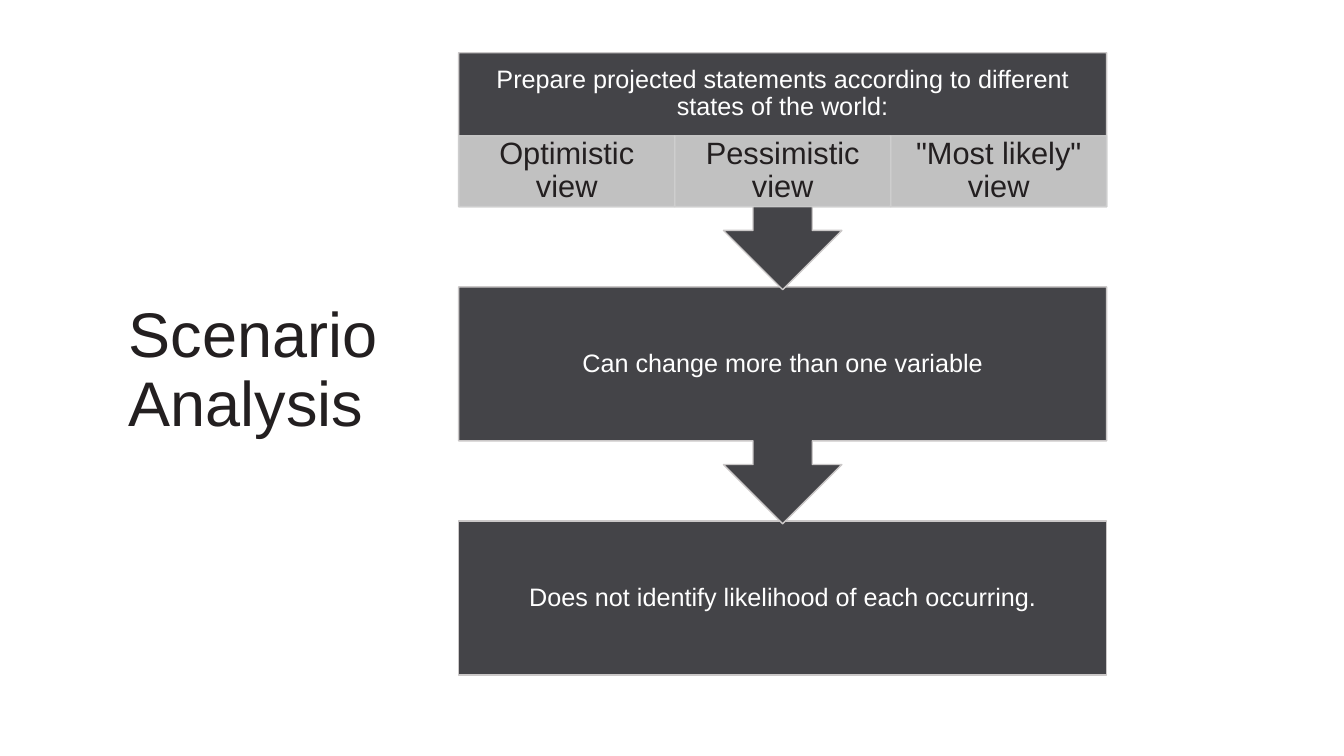
from lxml import etree
from pptx import Presentation
from pptx import util as u
from pptx.dml.color import RGBColor
from pptx.enum import shapes, text
from pptx.oxml.ns import qn

DARK, BORDER, VIEW_GREY = "444448", "CBC8C8", "CFCFCF"
INK, WHITE = "231F20", "FFFFFF"


def paint(color_format, hex_color, opacity=100):
    """Set a solid fill's or line's colour, with opacity in percent."""
    color_format.solid()
    color_format.fore_color.rgb = RGBColor.from_string(hex_color)
    if opacity < 100:
        color = color_format.fore_color
        element = color._color._xClr
        etree.SubElement(element, qn("a:alpha"), val=str(opacity * 1000))


def write(shape, words, size, hex_color, insets, align):
    """Fill a shape with one middle-anchored paragraph; insets are left, top, right, bottom in cm."""
    frame = shape.text_frame
    frame.word_wrap = True
    frame.vertical_anchor = text.MSO_ANCHOR.MIDDLE
    frame.margin_left, frame.margin_top, frame.margin_right, frame.margin_bottom = map(u.Cm, insets)
    paragraph = frame.paragraphs[0]
    paragraph.alignment = align
    paragraph.line_spacing = 0.9
    run = paragraph.add_run()
    run.text = words
    run.font.name = "Arial"
    run.font.size = u.Pt(size)
    paint(run.font.fill, hex_color)


presentation = Presentation()
presentation.slide_width = u.Cm(33.87)
presentation.slide_height = u.Cm(19.05)
slide = presentation.slides.add_slide(presentation.slide_layouts[6])

title = slide.shapes.add_textbox(u.Cm(3), u.Cm(1.63), u.Cm(7.04), u.Cm(15.47))
write(title, "Scenario Analysis", 45, INK, (0.25, 0.13, 0.25, 0.13), text.PP_ALIGN.LEFT)

# Three steps, drawn from the bottom up so each arrow tip lies over the next box
left, top, width, step_pitch = 11.56, 1.33, 16.33, 5.9
callout, box = shapes.MSO_SHAPE.DOWN_ARROW_CALLOUT, shapes.MSO_SHAPE.RECTANGLE
steps = [
    # words, shape, height, bottom inset (the first leaves room for the views)
    ("Prepare projected statements according to different states of the world:", callout, 5.97, 2.16),
    ("Can change more than one variable", callout, 5.97, 0.36),
    ("Does not identify likelihood of each occurring.", box, 3.88, 0.36),
]
for index, (words, kind, height, bottom_inset) in reversed(list(enumerate(steps))):
    step = slide.shapes.add_shape(
        kind, u.Cm(left), u.Cm(top + index * step_pitch), u.Cm(width), u.Cm(height))
    step.shadow.inherit = False
    paint(step.fill, DARK)
    paint(step.line.fill, BORDER)
    step.line.width = u.Pt(1)
    write(step, words, 18, WHITE, (0.36, 0.36, 0.36, bottom_inset), text.PP_ALIGN.CENTER)

# Views side by side in the lower part of the first step
view_width = width / 3
for column, words in enumerate(["Optimistic view", "Pessimistic view", '"Most likely" view']):
    view = slide.shapes.add_shape(
        box, u.Cm(left + column * view_width), u.Cm(3.42), u.Cm(view_width), u.Cm(1.79))
    view.shadow.inherit = False
    paint(view.fill, VIEW_GREY, 90)
    paint(view.line.fill, VIEW_GREY, 90)
    view.line.width = u.Pt(1)
    write(view, words, 22, INK, (0.43, 0.08, 0.43, 0.08), text.PP_ALIGN.CENTER)

presentation.save("out.pptx")
